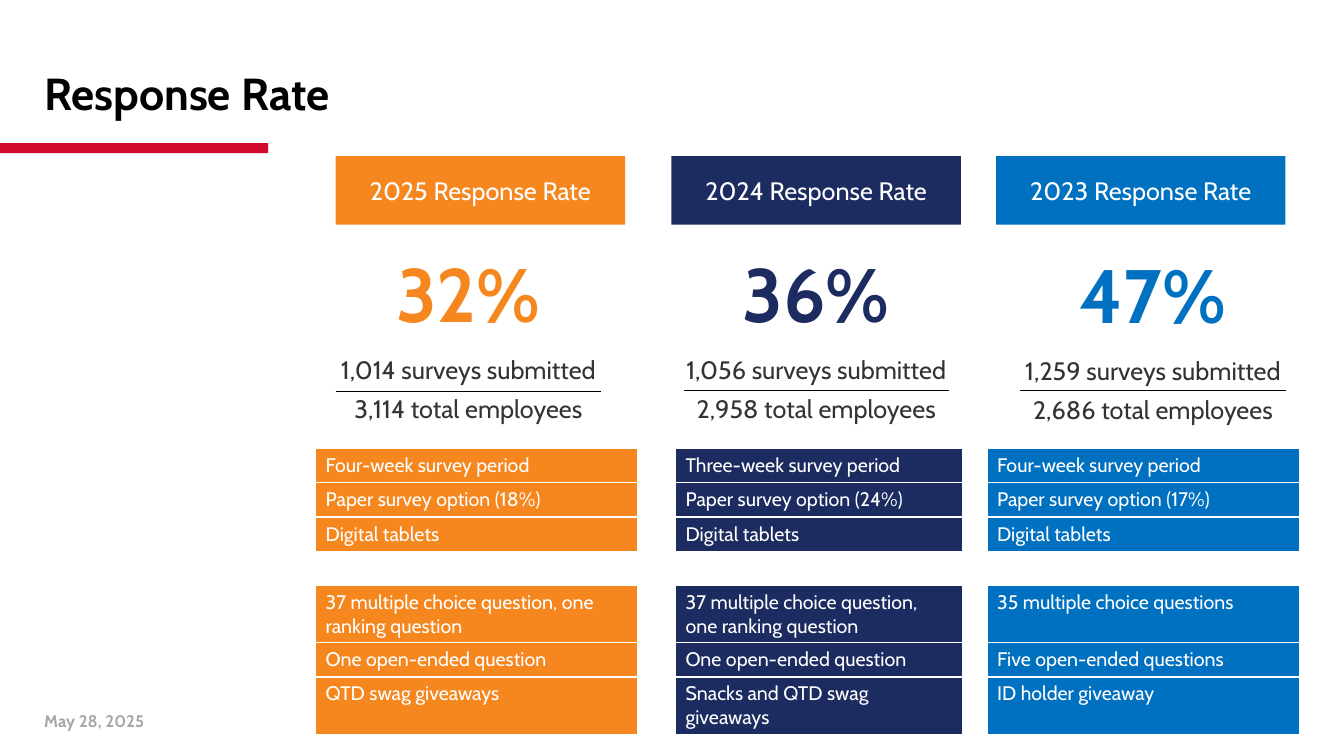
import pptx
import pptx.chart.data
import pptx.dml.color
import pptx.enum.shapes
import pptx.enum.text
import pptx.oxml
import pptx.oxml.ns
import pptx.util
from dataclasses import dataclass

Inches = pptx.util.Inches
Pt = pptx.util.Pt
Align = pptx.enum.text.PP_ALIGN
Anchor = pptx.enum.text.MSO_ANCHOR

TITLE = "Response Rate"
DATE = "May 28, 2025"
YEARS = [
    dict(year="2025", rate="32%", surveys="1,014", employees="3,114", color="F6871F",
         header_left=3.33, figure=(2.47, 2.22, 4.35, 2.24), rule=(3.33, 3.88), column=3.19,
         methods=["Four-week survey period", "Paper survey option (18%)", "Digital tablets"],
         content=["37 multiple choice question, one ranking question",
                  "One open-ended question", "QTD swag giveaways"]),
    dict(year="2024", rate="36%", surveys="1,056", employees="2,958", color="1C2C60",
         header_left=6.66, figure=(6.02, 2.22, 4.15, 2.12), rule=(6.78, 3.87), column=2.85,
         methods=["Three-week survey period", "Paper survey option (24%)", "Digital tablets"],
         content=["37 multiple choice question, one ranking question",
                  "One open-ended question", "Snacks and QTD swag giveaways"]),
    dict(year="2023", rate="47%", surveys="1,259", employees="2,686", color="0070C0",
         header_left=9.88, figure=(9.36, 2.23, 4.15, 2.12), rule=(10.12, 3.87), column=3.1,
         methods=["Four-week survey period", "Paper survey option (17%)", "Digital tablets"],
         content=["35 multiple choice questions",
                  "Five open-ended questions", "ID holder giveaway"]),
]
COLUMN_GAPS = [0.38, 0.23]
ONE_LINE, TWO_LINES = 0.34, 0.56
ROWS = [ONE_LINE] * 4 + [TWO_LINES, ONE_LINE, TWO_LINES]
TABLE_LEFT, TABLE_TOP = 3.13, 4.45
HEADER_TOP, HEADER_WIDTH, HEADER_HEIGHT = 1.55, 2.87, 0.68
RULE_WIDTH = 2.63


@dataclass(frozen=True)
class Theme:
    font: str = "Cabin"
    accent: str = "CF0A2C"
    black: str = "000000"
    body: str = "333333"
    white: str = "FFFFFF"
    muted: str = "A6A6A6"
    title: int = 32
    rate: int = 54
    text: int = 18
    cell: int = 14
    date: int = 12


THEME = Theme()


def rgb(value):
    return pptx.dml.color.RGBColor.from_string(value)


def write(paragraph, text, size, color, bold=False, align=Align.LEFT, spacing=1.0, after=0):
    paragraph.alignment = align
    paragraph.line_spacing = spacing
    paragraph.space_after = Pt(after)
    run = paragraph.add_run()
    run.text = text
    run.font.name = THEME.font
    run.font.size = Pt(size)
    run.font.bold = bold
    run.font.color.rgb = rgb(color)


def add_text_box(slide, box, anchor=Anchor.TOP):
    frame = slide.shapes.add_textbox(*map(Inches, box)).text_frame
    frame.word_wrap = True
    frame.vertical_anchor = anchor
    return frame


def add_block(slide, box, color):
    shape = slide.shapes.add_shape(
        pptx.enum.shapes.MSO_SHAPE.RECTANGLE, *map(Inches, box))
    shape.shadow.inherit = False
    shape.fill.solid()
    shape.fill.fore_color.rgb = rgb(color)
    shape.line.fill.background()
    return shape


def add_rule(slide, left, top):
    rule = slide.shapes.add_connector(
        pptx.enum.shapes.MSO_CONNECTOR.STRAIGHT,
        Inches(left), Inches(top), Inches(left + RULE_WIDTH), Inches(top))
    rule.line.color.rgb = rgb(THEME.black)
    rule.line.width = Pt(0.75)
    pptx.oxml.ns.qn("a:effectLst")
    rule._element.spPr.append(pptx.oxml.parse_xml(
        f'<a:effectLst {pptx.oxml.ns.nsdecls("a")}/>'))


def add_year(slide, year):
    header = add_block(
        slide, (year["header_left"], HEADER_TOP, HEADER_WIDTH, HEADER_HEIGHT), year["color"])
    header.text_frame.vertical_anchor = Anchor.MIDDLE
    write(header.text_frame.paragraphs[0], f"{year['year']} Response Rate",
          THEME.text, THEME.white, align=Align.CENTER)
    frame = add_text_box(slide, year["figure"])
    write(frame.paragraphs[0], year["rate"], THEME.rate, year["color"],
          bold=True, align=Align.CENTER, spacing=1.2, after=12)
    for line in (f"{year['surveys']} surveys submitted", f"{year['employees']} total employees"):
        write(frame.add_paragraph(), line, THEME.text, THEME.body, align=Align.CENTER, after=6)
    add_rule(slide, *year["rule"])


def border_cell(cell):
    properties = cell._tc.get_or_add_tcPr()
    for index, side in enumerate(("lnL", "lnR", "lnT", "lnB")):
        properties.insert(index, pptx.oxml.parse_xml(
            f'<a:{side} {pptx.oxml.ns.nsdecls("a")} w="12700"><a:solidFill>'
            f'<a:srgbClr val="{THEME.white}"/></a:solidFill></a:{side}>'))


def add_details(slide):
    widths = [YEARS[0]["column"]]
    for gap, year in zip(COLUMN_GAPS, YEARS[1:]):
        widths += [gap, year["column"]]
    table = slide.shapes.add_table(
        len(ROWS), len(widths), Inches(TABLE_LEFT), Inches(TABLE_TOP),
        Inches(sum(widths)), Inches(sum(ROWS))).table
    table.first_row = table.horz_banding = False
    for column, width in zip(table.columns, widths):
        column.width = Inches(width)
    for row, height in zip(table.rows, ROWS):
        row.height = Inches(height)
    for column in range(len(widths)):
        year = YEARS[column // 2]
        lines = year["methods"] + [""] + year["content"]
        for row, line in enumerate(lines):
            cell = table.cell(row, column)
            if line and column % 2 == 0:
                cell.fill.solid()
                cell.fill.fore_color.rgb = rgb(year["color"])
                write(cell.text_frame.paragraphs[0], line, THEME.cell, THEME.white)
            else:
                cell.fill.background()
                cell.margin_top = cell.margin_bottom = 0
            border_cell(cell)


def main():
    presentation = pptx.Presentation()
    presentation.slide_width = Inches(13.33)
    presentation.slide_height = Inches(7.5)
    slide = presentation.slides.add_slide(presentation.slide_layouts[6])
    add_block(slide, (0, 1.42, 2.66, 0.1), THEME.accent)
    title = add_text_box(slide, (0.34, 0.23, 11.5, 1.45), Anchor.MIDDLE)
    write(title.paragraphs[0], TITLE, THEME.title, THEME.black, bold=True, spacing=0.9)
    for year in YEARS:
        add_year(slide, year)
    add_details(slide)
    date = add_text_box(slide, (0.34, 7, 3.07, 0.4))
    write(date.paragraphs[0], DATE, THEME.date, THEME.muted, bold=True, after=12)
    presentation.save("out.pptx")


if __name__ == "__main__":
    main()
